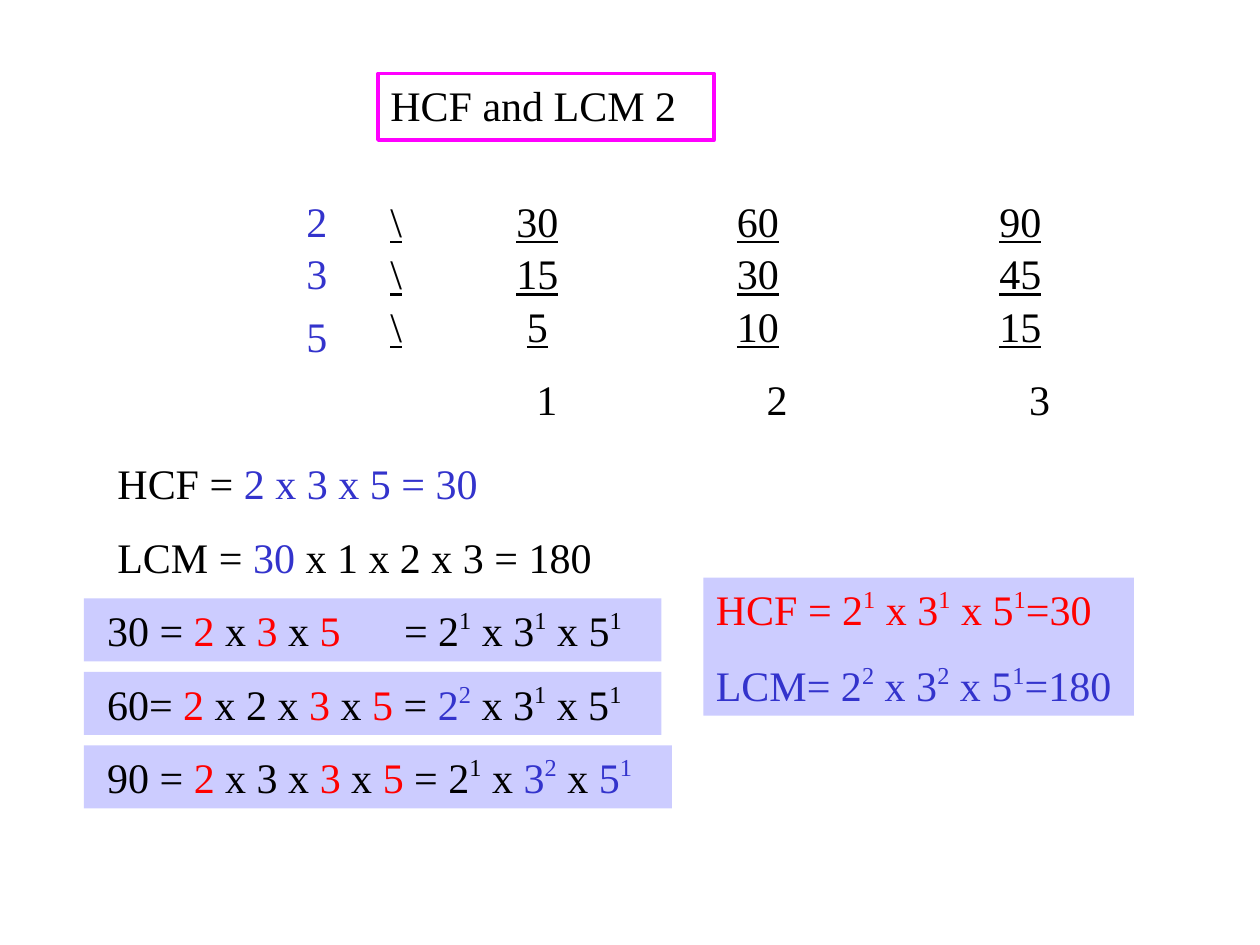
from dataclasses import dataclass

from lxml import etree
from pptx import Presentation
from pptx import util as u
from pptx.dml.color import RGBColor
from pptx.enum import shapes, text
from pptx.oxml import ns


@dataclass(frozen=True)
class Theme:
    font: str = "Times New Roman"
    size: float = 24
    superscript: int = 40000
    black: str = "000000"
    blue: str = "3333CC"
    red: str = "FF0000"
    magenta: str = "FF00FF"
    panel: str = "CCCCFF"


theme = Theme()
deck = Presentation()
deck.slide_width, deck.slide_height = u.Pt(720), u.Pt(540)
page = deck.slides.add_slide(deck.slide_layouts[6])


def add_span(para, words, color=theme.black, underline=None, raised=False):
    span = para.add_run()
    span.text = words
    span.font.name = theme.font
    span.font.size = u.Pt(theme.size)
    span.font.color.rgb = RGBColor.from_string(color)
    span.font.underline = underline
    if raised:
        span._r.get_or_add_rPr().set("baseline", str(theme.superscript))


def add_box(lines, left, top, width, height=36, fill=None, line=None,
            underline=None, indent=7.2, tabs=(), tab_align="ctr"):
    box = page.shapes.add_shape(shapes.MSO_SHAPE.RECTANGLE, *map(u.Pt, (left, top, width, height)))
    box.shadow.inherit = False
    if fill:
        box.fill.solid()
        box.fill.fore_color.rgb = RGBColor.from_string(fill)
    else:
        box.fill.background()
    if line:
        box.line.color.rgb = RGBColor.from_string(line)
        box.line.width = u.Pt(2)
    else:
        box.line.fill.background()
    frame = box.text_frame
    frame.word_wrap = True
    frame.vertical_anchor = text.MSO_ANCHOR.TOP
    frame.margin_left = u.Pt(indent)
    for number, pieces in enumerate(lines):
        para = frame.add_paragraph() if number else frame.paragraphs[0]
        para.alignment = text.PP_ALIGN.LEFT
        para.space_before = u.Pt(14.4 if number else 0)
        if tabs:
            stops = etree.SubElement(para._p.get_or_add_pPr(), ns.qn("a:tabLst"))
            for stop in tabs:
                etree.SubElement(stops, ns.qn("a:tab"), pos=str(u.Pt(stop)), algn=tab_align)
        for words, color in pieces:
            base, *powers = words.split("^")
            add_span(para, base, color=color, underline=underline)
            for power in powers:
                add_span(para, power[0], color=color, raised=True)
                if power[1:]:
                    add_span(para, power[1:], color=color)


black, blue, red = theme.black, theme.blue, theme.red

add_box([[("HCF and LCM 2", black)]], 216, 42, 192, 38, line=theme.magenta)

divisions = [
    (108, 108, "2", (30, 60, 90)),
    (138, 138, "3", (15, 30, 45)),
    (168, 174, "5", (5, 10, 15)),
]
for row_top, divisor_top, divisor, numbers in divisions:
    row = "\t".join(["\\", *map(str, numbers)])
    add_box([[(row, black)]], 216, row_top, 426, underline=True, tabs=(84, 210, 360))
    add_box([[(divisor, blue)]], 168, divisor_top, 36)
add_box([[("\t1\t2\t3", black)]], 216, 210, 426, tabs=(89.5, 221, 371))

add_box([[("HCF = ", black), ("2 x 3 x 5 = 30", blue)]], 60, 258, 528)
add_box([[("LCM = ", black), ("30", blue), (" x 1 x 2 x 3 = 180", black)]], 60, 300, 546)

factorings = [
    (330, [("30 = ", black), ("2", red), (" x ", black), ("3", red), (" x ", black),
           ("5", red), ("\t= 2^1 x 3^1 x 5^1", black)]),
    (330, [("60= ", black), ("2", red), (" x 2 x ", black), ("3", red), (" x ", black),
           ("5", red), (" = ", black), ("2^2", blue), (" x 3^1 x 5^1", black)]),
    (336, [("90 = ", black), ("2", red), (" x 3 x ", black), ("3", red), (" x ", black),
           ("5", red), (" = 2^1 x ", black), ("3^2", blue), (" x ", black), ("5^1", blue)]),
]
for index, (width, pieces) in enumerate(factorings):
    add_box([pieces], 48, 342 + 42 * index, width, fill=theme.panel,
            indent=13.2, tabs=(169.7,), tab_align="l")

add_box([[("HCF = 2^1 x 3^1 x 5^1=30", red)], [("LCM= 2^2 x 3^2 x 5^1=180", blue)]],
        402, 330, 246, 79, fill=theme.panel)

deck.save("out.pptx")
